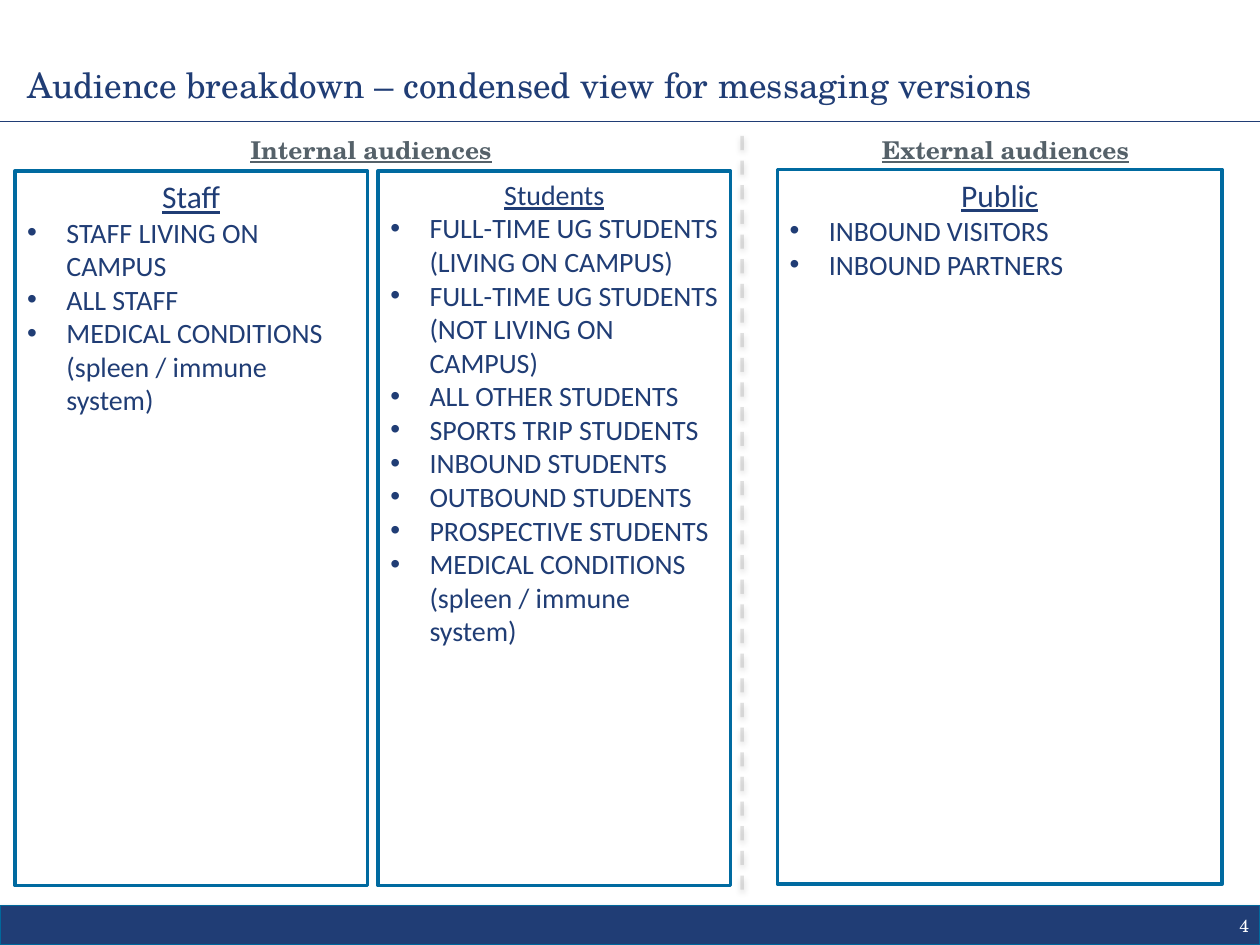
"""Build the audience breakdown slide with internal and external audience panels."""
import pptx
import pptx.util
import pptx.dml.color
import pptx.enum.dml
import pptx.enum.shapes
import pptx.enum.text
import pptx.oxml
import pptx.oxml.ns
from lxml import etree
from pptx.util import Cm

Align = pptx.enum.text.PP_ALIGN
Anchor = pptx.enum.text.MSO_ANCHOR
Color = pptx.dml.color.RGBColor.from_string
qn = pptx.oxml.ns.qn

THEME = {
    "navy": Color("203D75"),
    "bar_edge": Color("00689C"),
    "panel_edge": Color("006AA0"),
    "heading": Color("556169"),
    "divider": Color("A6A6A6"),
    "white": Color("FFFFFF"),
    "serif": "TeX Gyre Schola",
    "sans": "Calibri",
    "title_size": 20,
    "panel_size": 18,
    "body_size": 16,
    "heading_size": 14,
    "number_size": 10,
}


def style_runs(paragraph, face, size, color, alignment=Align.LEFT, bold=False, underline=False):
    paragraph.alignment = alignment
    for run in paragraph.runs:
        run.font.name = face
        run.font.size = pptx.util.Pt(size)
        run.font.color.rgb = color
        run.font.bold = bold
        run.font.underline = underline


def set_effects(shape, shadow_alpha=None, distance=0):
    properties = shape._element.spPr
    effects = etree.SubElement(properties, qn("a:effectLst"))
    if shadow_alpha is not None:
        shadow = etree.SubElement(
            effects, qn("a:outerShdw"), blurRad=str(pptx.util.Pt(3.1)),
            dist=str(pptx.util.Pt(distance)), dir="5400000", rotWithShape="0")
        black = etree.SubElement(shadow, qn("a:srgbClr"), val="000000")
        etree.SubElement(black, qn("a:alpha"), val=str(shadow_alpha * 1000))


presentation = pptx.Presentation()
presentation.slide_width = Cm(25.4)
presentation.slide_height = Cm(19.05)
slide = presentation.slides.add_slide(presentation.slide_layouts[5])
shapes = slide.shapes
rectangle = pptx.enum.shapes.MSO_SHAPE.RECTANGLE
straight = pptx.enum.shapes.MSO_CONNECTOR.STRAIGHT

footer_bar = shapes.add_shape(rectangle, Cm(0), Cm(18.26), Cm(25.4), Cm(0.79))
footer_bar.fill.solid()
footer_bar.fill.fore_color.rgb = THEME["navy"]
footer_bar.line.color.rgb = THEME["bar_edge"]
footer_bar.line.width = pptx.util.Pt(0.75)
set_effects(footer_bar, 35, 1.8)

title_rule = shapes.add_connector(straight, Cm(0), Cm(2.44), Cm(25.5), Cm(2.44))
title_rule.line.color.rgb = THEME["navy"]
title_rule.line.width = pptx.util.Pt(0.5)
set_effects(title_rule)

title = shapes.title
title.left, title.top, title.width, title.height = Cm(0.3), Cm(1.14), Cm(20.98), Cm(1.14)
title.text_frame.text = "Audience breakdown – condensed view for messaging versions"
title.text_frame.vertical_anchor = Anchor.MIDDLE
style_runs(title.text_frame.paragraphs[0], THEME["serif"], THEME["title_size"], THEME["navy"])

page_number = shapes.add_textbox(Cm(19.51), Cm(18.26), Cm(5.92), Cm(0.79))
page_number.text_frame.text = "4"
page_number.text_frame.word_wrap = True
page_number.text_frame.vertical_anchor = Anchor.MIDDLE
style_runs(page_number.text_frame.paragraphs[0], THEME["serif"], THEME["number_size"],
           THEME["white"], Align.RIGHT)

divider = shapes.add_connector(straight, Cm(14.96), Cm(2.74), Cm(14.96), Cm(18.08))
divider.line.color.rgb = THEME["divider"]
divider.line.width = pptx.util.Pt(2)
divider.line.dash_style = pptx.enum.dml.MSO_LINE.DASH
divider_color = divider._element.spPr.find(".//" + qn("a:srgbClr"))
etree.SubElement(divider_color, qn("a:alpha"), val="33000")
set_effects(divider, 38, 1.6)

headings = [("Internal audiences", 0.71, 13.54), ("External audiences", 15.9, 8.74)]
for text, left, width in headings:
    heading = shapes.add_textbox(Cm(left), Cm(2.59), Cm(width), Cm(0.86))
    heading.text_frame.text = text
    heading.text_frame.word_wrap = True
    style_runs(heading.text_frame.paragraphs[0], THEME["serif"], THEME["heading_size"],
               THEME["heading"], Align.CENTER, bold=True, underline=True)

medical = "MEDICAL CONDITIONS (spleen / immune system)"
panels = [
    ("Staff", THEME["panel_size"], 0.3, 3.45, 7.11,
     ["STAFF LIVING ON CAMPUS", "ALL STAFF", medical]),
    ("Students", THEME["body_size"], 7.62, 3.45, 7.11,
     ["FULL-TIME UG STUDENTS (LIVING ON CAMPUS)",
      "FULL-TIME UG STUDENTS (NOT LIVING ON CAMPUS)",
      "ALL OTHER STUDENTS", "SPORTS TRIP STUDENTS", "INBOUND STUDENTS",
      "OUTBOUND STUDENTS", "PROSPECTIVE STUDENTS", medical]),
    ("Public", THEME["panel_size"], 15.67, 3.42, 8.97,
     ["INBOUND VISITORS", "INBOUND PARTNERS"]),
]
for name, name_size, left, top, width, audiences in panels:
    panel = shapes.add_shape(rectangle, Cm(left), Cm(top), Cm(width), Cm(14.4))
    panel.shadow.inherit = False
    panel.fill.solid()
    panel.fill.fore_color.rgb = THEME["white"]
    panel.line.color.rgb = THEME["panel_edge"]
    panel.line.width = pptx.util.Pt(2)
    text_frame = panel.text_frame
    text_frame.word_wrap = True
    text_frame.vertical_anchor = Anchor.TOP
    text_frame.text = name
    style_runs(text_frame.paragraphs[0], THEME["sans"], name_size, THEME["navy"],
               Align.CENTER, underline=True)
    for audience in audiences:
        paragraph = text_frame.add_paragraph()
        paragraph.text = audience
        properties = paragraph._p.get_or_add_pPr()
        properties.set("marL", str(Cm(0.79)))
        properties.set("indent", str(-Cm(0.79)))
        etree.SubElement(properties, qn("a:buFont"), typeface="Arial")
        etree.SubElement(properties, qn("a:buChar"), char="•")
        style_runs(paragraph, THEME["sans"], THEME["body_size"], THEME["navy"])

presentation.save("out.pptx")
